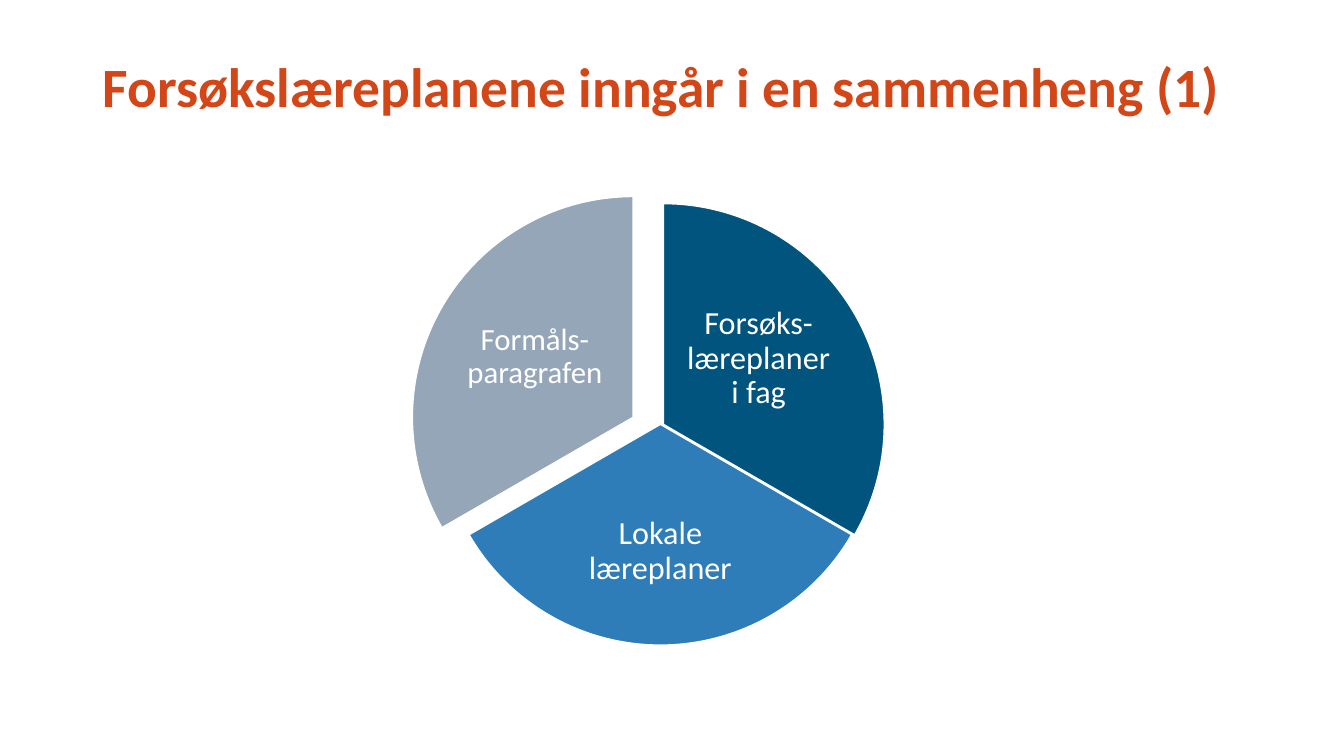
from pptx import Presentation
from pptx.dml.color import RGBColor
from pptx.enum.shapes import MSO_SHAPE
from pptx.enum.text import MSO_ANCHOR, MSO_AUTO_SIZE, PP_ALIGN
from pptx.util import Inches, Pt

PIE = MSO_SHAPE.PIE
MIDDLE = MSO_ANCHOR.MIDDLE
LEFT, CENTER = PP_ALIGN.LEFT, PP_ALIGN.CENTER

# Content: sectors run clockwise from the top
TITLE = "Forsøkslæreplanene inngår i en sammenheng (1)"
SECTORS = [
    {"label": "Forsøks-læreplaner i fag", "fill": "00547E", "size": 23,
     "corner": (4.39, 2.02), "label_box": (6.78, 2.83, 1.49, 1.46)},
    {"label": "Lokale læreplaner", "fill": "2E7CB8", "size": 23,
     "corner": (4.36, 2.02), "label_box": (5.56, 4.79, 1.98, 1.36)},
    {"label": "Formåls-paragrafen", "fill": "95A6B9", "size": 22,
     "corner": (4.09, 1.95), "label_box": (4.56, 2.81, 1.49, 1.46)},
]
THEME = {"font": "Calibri", "title": "D24617", "title_size": 39.6, "light": "FFFFFF"}

DIAMETER = 4.38
START_ANGLE = 270
SWEEP = 360 / len(SECTORS)
ADJUSTMENT_PER_DEGREE = 0.6  # 60000 units per degree, scaled by 100000
LABEL_INSET = 0.03


def write_text(frame, text, size, color, alignment, bold=False):
    frame.word_wrap = True
    frame.auto_size = MSO_AUTO_SIZE.NONE
    frame.vertical_anchor = MIDDLE
    paragraph = frame.paragraphs[0]
    paragraph.alignment = alignment
    paragraph.line_spacing = 0.9
    paragraph.space_before = Pt(0)
    run = paragraph.add_run()
    run.text = text
    run.font.name = THEME["font"]
    run.font.size = Pt(size)
    run.font.bold = bold
    run.font.color.rgb = RGBColor.from_string(color)


def add_sector(shapes, index, sector):
    left, top = sector["corner"]
    shape = shapes.add_shape(PIE, Inches(left), Inches(top),
                             Inches(DIAMETER), Inches(DIAMETER))
    for edge in range(2):
        angle = (START_ANGLE + (index + edge) * SWEEP) % 360
        shape.adjustments[edge] = angle * ADJUSTMENT_PER_DEGREE
    shape.shadow.inherit = False
    shape.fill.solid()
    shape.fill.fore_color.rgb = RGBColor.from_string(sector["fill"])
    shape.line.color.rgb = RGBColor.from_string(THEME["light"])
    shape.line.width = Pt(1)


def add_label(shapes, sector):
    box = shapes.add_textbox(*map(Inches, sector["label_box"]))
    frame = box.text_frame
    frame.margin_left = frame.margin_right = Inches(LABEL_INSET)
    frame.margin_top = frame.margin_bottom = Inches(LABEL_INSET)
    write_text(frame, sector["label"], sector["size"], THEME["light"], CENTER)


def main():
    presentation = Presentation()
    presentation.slide_width = Inches(13.33)
    presentation.slide_height = Inches(7.5)
    slide = presentation.slides.add_slide(presentation.slide_layouts[5])

    # Title
    title = slide.shapes.title
    title.left, title.top = Inches(0.92), Inches(0.4)
    title.width, title.height = Inches(11.5), Inches(0.97)
    write_text(title.text_frame, TITLE, THEME["title_size"], THEME["title"], LEFT, bold=True)

    # Pie diagram
    diagram = slide.shapes.add_group_shape()
    for index, sector in enumerate(SECTORS):
        add_sector(diagram.shapes, index, sector)
        add_label(diagram.shapes, sector)

    presentation.save("out.pptx")


if __name__ == "__main__":
    main()
